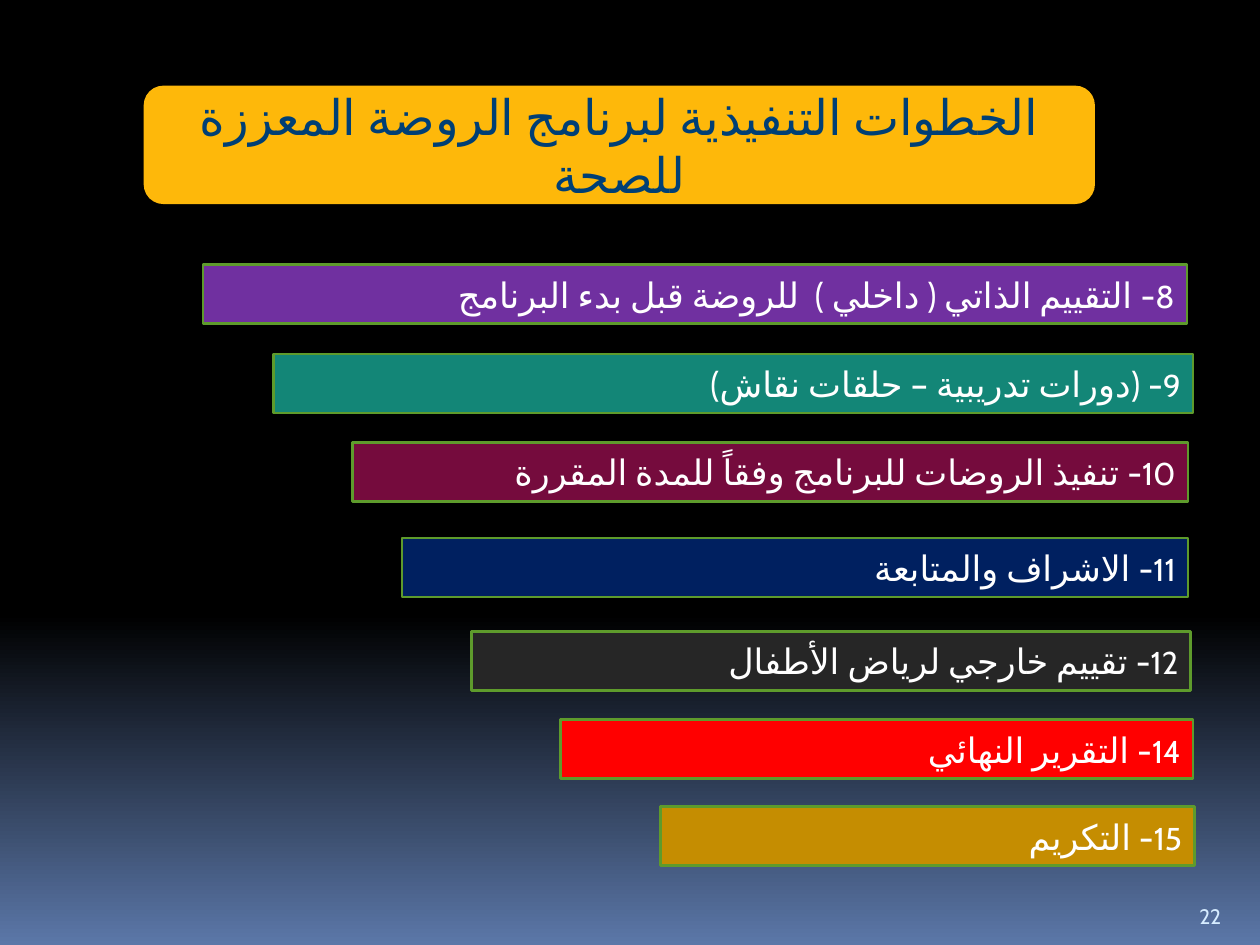
from copy import deepcopy

from lxml.etree import SubElement
from pptx import Presentation
from pptx.dml.color import RGBColor
from pptx.enum.shapes import MSO_SHAPE
from pptx.enum.text import MSO_ANCHOR, PP_ALIGN
from pptx.oxml.ns import qn
from pptx.util import Inches, Pt

FONT = "Cabin"
WHITE = "FFFFFF"
BORDER = "5E9B2C"
STEP_HEIGHT = 0.47
TITLE = "الخطوات التنفيذية لبرنامج الروضة المعززة للصحة"
STEPS = [
    ("8", "- التقييم الذاتي ( داخلي )  للروضة قبل بدء البرنامج", "7030A0", 1.61, 2.1, 7.81),
    ("9", "- (دورات تدريبية – حلقات نقاش)", "138677", 2.17, 2.81, 7.3),
    ("10", "- تنفيذ الروضات للبرنامج وفقاً للمدة المقررة", "750B3D", 2.8, 3.51, 6.63),
    ("11", "- الاشراف والمتابعة", "002060", 3.19, 4.27, 6.24),
    ("12", "- تقييم خارجي لرياض الأطفال", "262626", 3.74, 5.01, 5.71),
    ("14", "- التقرير النهائي", "FF0000", 4.45, 5.71, 5.02),
    ("15", "- التكريم", "C58D01", 5.24, 6.4, 4.24),
]


def color(hex_code):
    """Return the colour for a hex string."""
    return RGBColor.from_string(hex_code)


def write_rtl(frame, runs, hex_code, align, anchor):
    """Write one right-to-left paragraph from (text, size) runs."""
    frame.word_wrap = True
    frame.vertical_anchor = anchor
    paragraph = frame.paragraphs[0]
    paragraph.alignment = align
    paragraph._p.get_or_add_pPr().set("rtl", "1")
    for text, size in runs:
        run = paragraph.add_run()
        run.text = text
        run.font.name = FONT
        run.font.size = Pt(size)
        run.font.color.rgb = color(hex_code)
        properties = run._r.get_or_add_rPr()
        properties.set("lang", "ar-SA")
        SubElement(properties, qn("a:cs")).set("typeface", FONT)


def paint_background(slide):
    """Fade the background from black to blue in its lower third."""
    fill = slide.background.fill
    fill.gradient()
    fill.gradient_angle = 270
    black, blue = fill.gradient_stops
    black.color.rgb = color("000000")
    blue.color.rgb = color("5B77A8")
    stops = slide._element.find(".//" + qn("a:gsLst"))
    fade_start = deepcopy(stops[0])
    fade_start.set("pos", "65000")
    stops.insert(1, fade_start)


def add_panel(slide, outline, box, fill):
    """Add a filled panel without shadow or border."""
    panel = slide.shapes.add_shape(outline, *map(Inches, box))
    panel.shadow.inherit = False
    panel.fill.solid()
    panel.fill.fore_color.rgb = color(fill)
    panel.line.fill.background()
    return panel


def add_title(slide, box):
    """Add the rounded title banner."""
    banner = add_panel(slide, MSO_SHAPE.ROUNDED_RECTANGLE, box, "FEB80A")
    write_rtl(banner.text_frame, [(TITLE, 28)], "003F75", PP_ALIGN.CENTER, MSO_ANCHOR.MIDDLE)


def add_step(slide, box, number, wording, fill):
    """Add one numbered step bar."""
    bar = add_panel(slide, MSO_SHAPE.RECTANGLE, box, fill)
    bar.line.color.rgb = color(BORDER)
    bar.line.width = Pt(1.5)
    runs = [(number, 18), (wording, 20)]
    write_rtl(bar.text_frame, runs, WHITE, PP_ALIGN.RIGHT, MSO_ANCHOR.MIDDLE)


def add_page_number(slide, box):
    """Add the page number."""
    page_number = slide.shapes.add_textbox(*map(Inches, box))
    write_rtl(page_number.text_frame, [("22", 12)], "D6ECFF", PP_ALIGN.LEFT, MSO_ANCHOR.BOTTOM)


def main():
    """Build and save the slide."""
    deck = Presentation()
    deck.slide_width, deck.slide_height = Inches(10), Inches(7.5)
    slide = deck.slides.add_slide(deck.slide_layouts[6])
    paint_background(slide)
    add_title(slide, (1.14, 0.68, 7.55, 0.94))
    for number, wording, fill, left, top, width in STEPS:
        add_step(slide, (left, top, width, STEP_HEIGHT), number, wording, fill)
    add_page_number(slide, (9.42, 7.02, 0.5, 0.4))
    deck.save("out.pptx")


if __name__ == "__main__":
    main()
